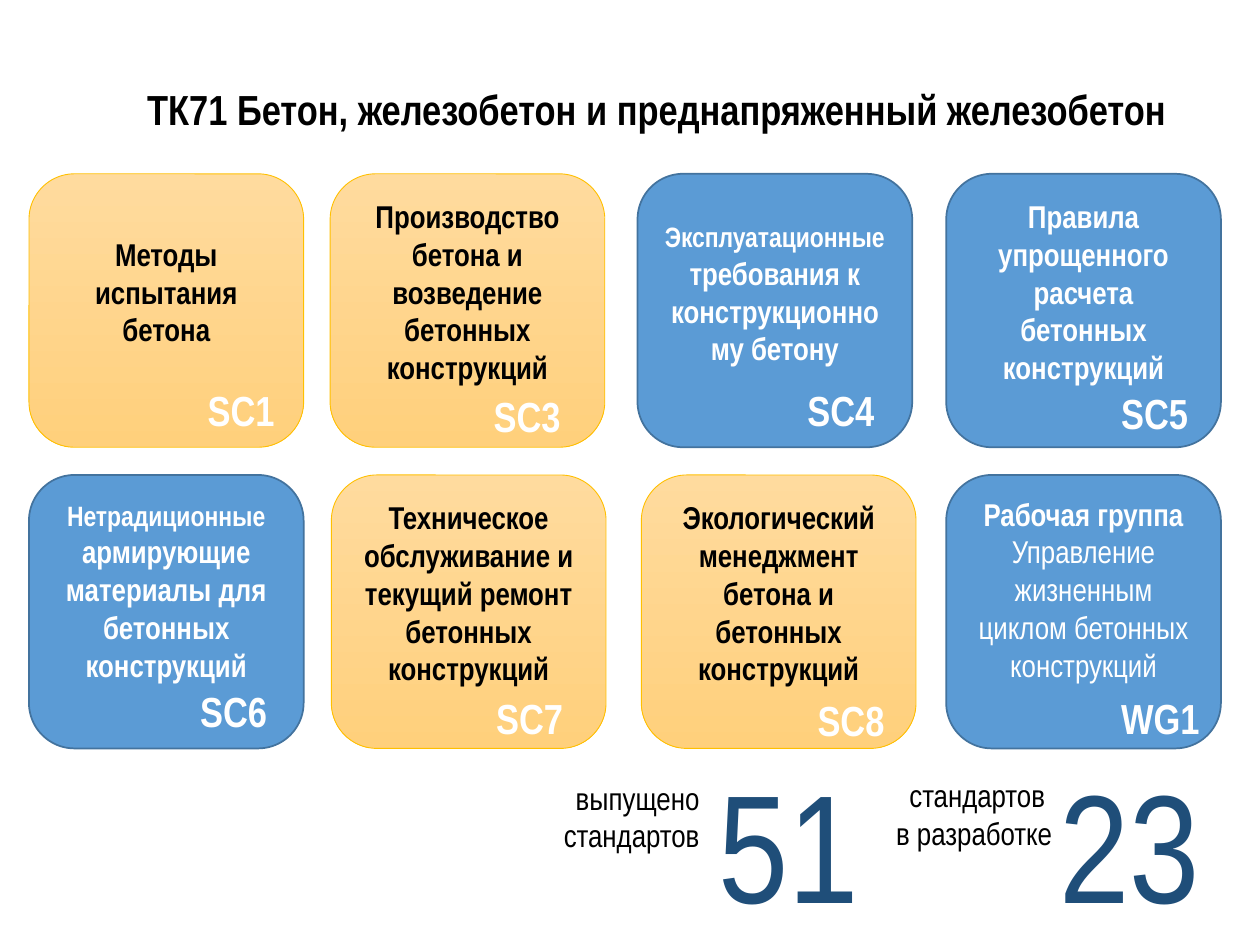
from pptx import Presentation
from pptx.dml.color import RGBColor
from pptx.enum.shapes import MSO_SHAPE as Shape
from pptx.enum.text import MSO_ANCHOR as Anchor, PP_ALIGN as Align
from pptx.util import Inches, Pt

FONT = "Arial Narrow"
BLACK = RGBColor(0x00, 0x00, 0x00)
WHITE = RGBColor(0xFF, 0xFF, 0xFF)
NAVY = RGBColor(0x1F, 0x4E, 0x79)
BLUE = RGBColor(0x5B, 0x9B, 0xD5)
BLUE_EDGE = RGBColor(0x43, 0x73, 0x9E)
AMBER_TOP = RGBColor(0xFF, 0xDB, 0x9E)
AMBER_BOTTOM = RGBColor(0xFF, 0xD0, 0x7C)
AMBER_EDGE = RGBColor(0xFF, 0xC0, 0x00)

CARD_WIDTH, CARD_HEIGHT = 2.18, 2.17
TOP_ROW, BOTTOM_ROW = 1.38, 3.77
CODE_ROOM = 0.35  # space kept free under the text of a centred card

# left, top, amber, centred, paragraphs of (text, size, bold), code, code left, code top
CARDS = [
    (0.23, TOP_ROW, True, True, [[("Методы испытания бетона", 18, True)]],
     "SC1", 1.55, 3.0),
    (2.62, TOP_ROW, True, True,
     [[("Производство бетона и возведение бетонных конструкций", 18, True)]],
     "SC3", 3.82, 3.05),
    (5.06, TOP_ROW, False, True,
     [[("Эксплуатационные", 16, True),
       (" требования к конструкционному бетону", 18, True)]],
     "SC4", 6.31, 3.0),
    (7.51, TOP_ROW, False, True,
     [[("Правила упрощенного расчета бетонных конструкций", 18, True)]],
     "SC5", 8.8, 3.03),
    (0.23, BOTTOM_ROW, False, False,
     [[("Нетрадиционные", 16, True),
       (" армирующие материалы для бетонных конструкций", 18, True)]],
     "SC6", 1.49, 5.39),
    (2.63, BOTTOM_ROW, True, True,
     [[("Техническое обслуживание и текущий ремонт бетонных конструкций", 18, True)]],
     "SC7", 3.84, 5.45),
    (5.09, BOTTOM_ROW, True, True,
     [[("Экологический менеджмент бетона и бетонных конструкций", 18, True)]],
     "SC8", 6.39, 5.46),
    (7.51, BOTTOM_ROW, False, False,
     [[("Рабочая группа", 18, True)],
      [("Управление жизненным циклом бетонных конструкций", 18, False)]],
     "WG1", 8.8, 5.45),
]


def style_font(font, size, color, bold=False):
    font.name = FONT
    font.size = Pt(size)
    font.bold = bold
    font.color.rgb = color


def add_text(page, area, lines, size, color, bold=False, align=Align.LEFT, wrap=False):
    box = page.shapes.add_textbox(*(Inches(value) for value in area))
    frame = box.text_frame
    frame.word_wrap = wrap
    for index, line in enumerate(lines):
        para = frame.paragraphs[0] if index == 0 else frame.add_paragraph()
        para.text = line
        para.alignment = align
        style_font(para.font, size, color, bold)


def paint_card(card, amber):
    card.shadow.inherit = False
    if amber:
        card.fill.gradient()
        card.fill.gradient_angle = 270
        for stop, color in zip(card.fill.gradient_stops, (AMBER_TOP, AMBER_BOTTOM)):
            stop.color.rgb = color
    else:
        card.fill.solid()
        card.fill.fore_color.rgb = BLUE
    card.line.color.rgb = AMBER_EDGE if amber else BLUE_EDGE
    card.line.width = Pt(0.5 if amber else 1)


def add_card(page, left, top, amber, centred, paragraphs):
    card = page.shapes.add_shape(Shape.ROUNDED_RECTANGLE, Inches(left), Inches(top),
                                 Inches(CARD_WIDTH), Inches(CARD_HEIGHT))
    paint_card(card, amber)
    frame = card.text_frame
    frame.word_wrap = True
    frame.vertical_anchor = Anchor.MIDDLE if centred else Anchor.TOP
    if centred:
        frame.margin_bottom = Inches(CODE_ROOM)
    for index, spans in enumerate(paragraphs):
        para = frame.paragraphs[0] if index == 0 else frame.add_paragraph()
        para.alignment = Align.CENTER
        for text, size, bold in spans:
            span = para.add_run()
            span.text = text
            style_font(span.font, size, BLACK if amber else WHITE, bold)


def main():
    deck = Presentation()
    deck.slide_width, deck.slide_height = Inches(10), Inches(7.5)
    page = deck.slides.add_slide(deck.slide_layouts[6])

    # Title
    add_text(page, (0.72, 0.61, 8.98, 0.81),
             ["ТК71 Бетон, железобетон и преднапряженный железобетон"],
             24, BLACK, bold=True, align=Align.CENTER, wrap=True)

    # Totals with their captions
    add_text(page, (5.6, 5.9, 1.39, 1.58), ["51"], 88, NAVY, wrap=True)
    add_text(page, (4.35, 6.13, 1.3, 0.71), ["выпущено", "стандартов"],
             18, BLACK, align=Align.RIGHT)
    add_text(page, (6.99, 6.11, 1.46, 0.71), ["стандартов ", "в разработке"],
             18, BLACK, align=Align.RIGHT)
    add_text(page, (8.31, 5.9, 1.39, 1.58), ["23"], 88, NAVY, wrap=True)

    # Subcommittee cards and their codes
    for left, top, amber, centred, paragraphs, code, code_left, code_top in CARDS:
        add_card(page, left, top, amber, centred, paragraphs)
        code_width = 0.83 if code.startswith("WG") else 0.74
        add_text(page, (code_left, code_top, code_width, 0.5), [code],
                 24, WHITE, bold=True)

    deck.save("out.pptx")


if __name__ == "__main__":
    main()
